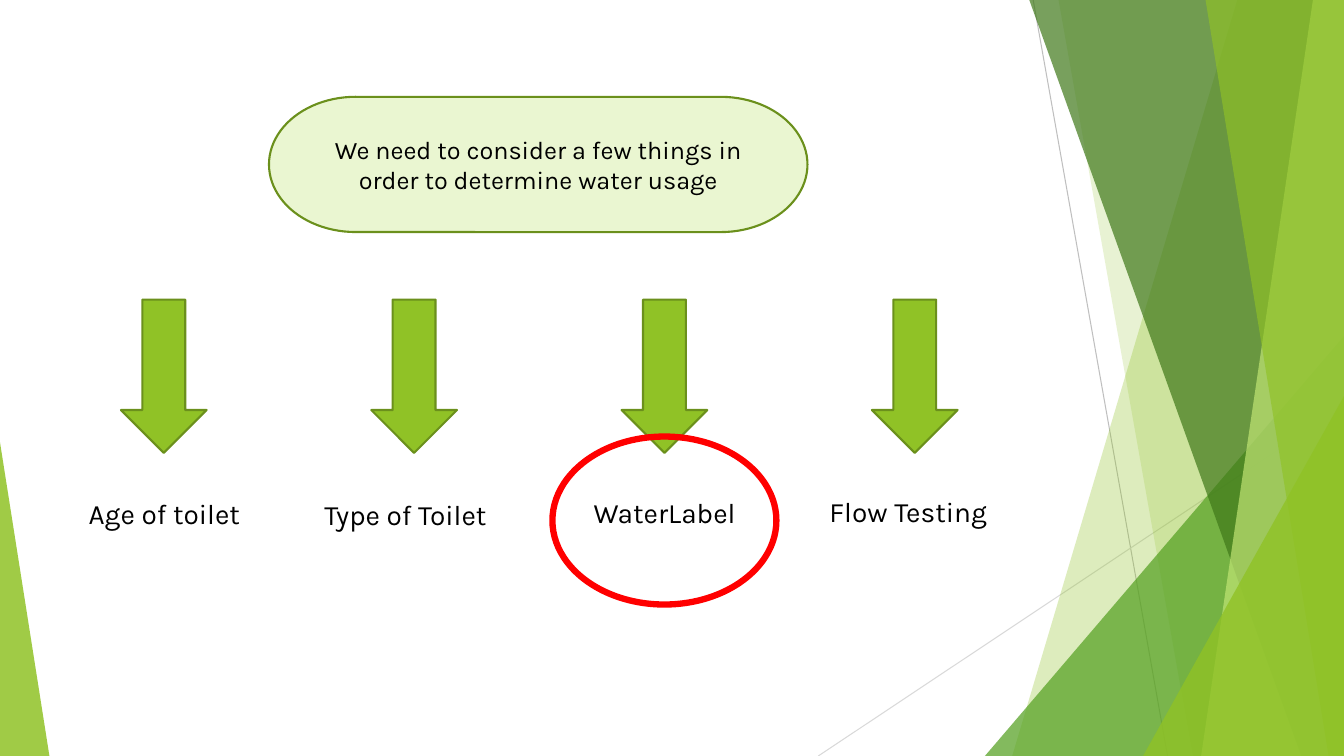
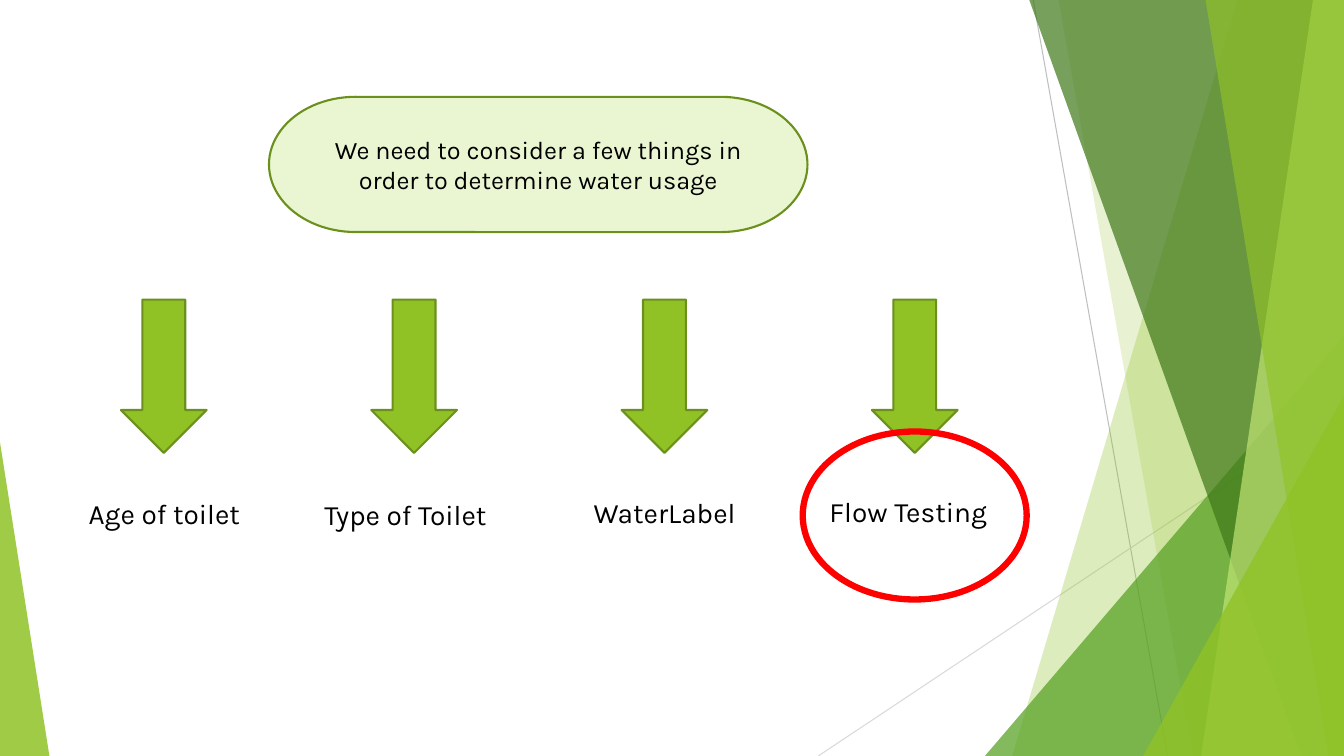
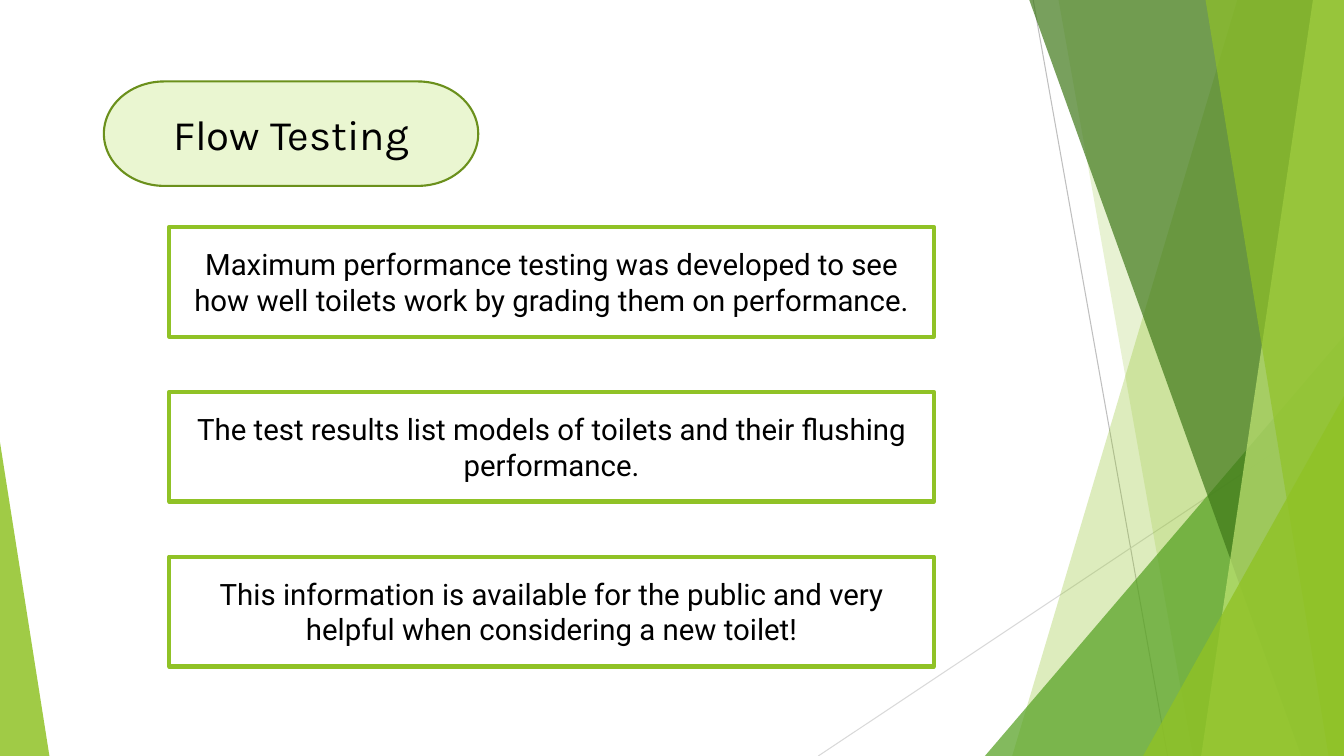
import pptx
import pptx.util
import pptx.dml.color
import pptx.enum.shapes
import pptx.enum.text
import pptx.oxml.ns
import lxml.etree

Pt = pptx.util.Pt
RGBColor = pptx.dml.color.RGBColor
SHAPE = pptx.enum.shapes.MSO_SHAPE
ALIGN = pptx.enum.text.PP_ALIGN
ANCHOR = pptx.enum.text.MSO_ANCHOR
qn = pptx.oxml.ns.qn

BLACK = RGBColor(0x00, 0x00, 0x00)
WHITE = RGBColor(0xFF, 0xFF, 0xFF)
RED = RGBColor(0xFF, 0x00, 0x00)
GREEN = RGBColor(0x90, 0xC2, 0x26)
MID_GREEN = RGBColor(0x54, 0xA0, 0x21)
DARK_GREEN = RGBColor(0x3F, 0x78, 0x19)
LIME = RGBColor(0xC0, 0xE4, 0x74)
PALE_GREEN = RGBColor(0xEA, 0xF6, 0xD1)
OUTLINE = RGBColor(0x6B, 0x90, 0x1C)
GRAY = RGBColor(0xBF, 0xBF, 0xBF)
LIGHT_GRAY = RGBColor(0xD9, 0xD9, 0xD9)

WIDTH, HEIGHT = 960, 540
HEAD_FONT, BODY_FONT = "Karla", "Roboto"

# Background lines: start, end, colour
RAYS = [
    ((738, 0), (834, HEIGHT), GRAY),
    ((WIDTH, 290), (584.5, HEIGHT), LIGHT_GRAY),
]
# Background bands, back to front: kind, measures, colour, opacity in percent.
# A blade gives the top and bottom of its left edge; it reaches the right side.
# A wedge gives left, top, width and the place of its tip; it stands on the bottom.
BANDS = [
    ("blade", (884, 723), GREEN, 30),
    ("blade", (756, 852), GREEN, 20),
    ("wedge", (703.5, 240, 256.5, 1), MID_GREEN, 72),
    ("blade", (735, 929.5), DARK_GREEN, 70),
    ("blade", (938, 858), LIME, 70),
    ("blade", (861, 949), GREEN, 65),
    ("wedge", (816.5, 283, 143.5, 1), GREEN, 80),
    ("wedge", (0, 316, 35.3, 0), GREEN, 85),
]

QUESTION = "We need to consider a few things in order to determine water usage"
# Factor, left and top of its label
FACTORS = [
    ("Age of toilet", 56.2, 351.4),
    ("Type of Toilet", 224.6, 352.1),
    ("WaterLabel", 416.9, 350.6),
    ("Flow Testing", 585.4, 349.9),
]
# Index of the circled factor, top of the circle
CIRCLES = [(2, 311.8), (3, 308.2)]
TESTING_FACTS = [
    "Maximum performance testing was developed to see how well toilets work "
    "by grading them on performance.",
    "The test results list models of toilets and their flushing performance.",
    "This information is available for the public and very helpful when "
    "considering a new toilet!",
]

ARROW_LEFT, ARROW_TOP, ARROW_WIDTH, ARROW_HEIGHT = 86.4, 214, 61.2, 109.5
ARROW_PITCH = 178.8
CIRCLE_WIDTH, CIRCLE_HEIGHT = 160, 120
FACT_TOP, FACT_PITCH = 162, 117.8


def write(shape, text, *, size, font=HEAD_FONT, align=ALIGN.CENTER, anchor=ANCHOR.MIDDLE):
    frame = shape.text_frame
    frame.word_wrap = True
    frame.vertical_anchor = anchor
    para = frame.paragraphs[0]
    para.alignment = align
    span = para.add_run()
    span.text = text
    span.font.size = Pt(size)
    span.font.name = font
    span.font.color.rgb = BLACK


def paint(shape, fill=None, line=None, line_width=1.5, opacity=100):
    shape.shadow.inherit = False
    if fill is None:
        shape.fill.background()
    else:
        shape.fill.solid()
        shape.fill.fore_color.rgb = fill
    if opacity < 100:
        color = shape.element.spPr.find(qn("a:solidFill")).find(qn("a:srgbClr"))
        lxml.etree.SubElement(color, qn("a:alpha")).set("val", str(opacity * 1000))
    if line is None:
        shape.line.fill.background()
    else:
        shape.line.color.rgb = line
        shape.line.width = Pt(line_width)


def add_shape(page, kind, left, top, width, height, **look):
    shape = page.shapes.add_shape(kind, Pt(left), Pt(top), Pt(width), Pt(height))
    paint(shape, **look)
    return shape


def add_ray(page, start, end, color):
    ray = page.shapes.add_connector(
        pptx.enum.shapes.MSO_CONNECTOR.STRAIGHT, *map(Pt, start + end))
    ray.line.color.rgb = color
    ray.line.width = Pt(0.75)
    lxml.etree.SubElement(ray.element.spPr, qn("a:effectLst"))


def add_blade(page, top_x, bottom_x, **look):
    outline = page.shapes.build_freeform(Pt(top_x), Pt(-0.7))
    corners = [(WIDTH, -0.7), (WIDTH, HEIGHT), (bottom_x, HEIGHT)]
    outline.add_line_segments([(Pt(x), Pt(y)) for x, y in corners], close=True)
    paint(outline.convert_to_shape(), **look)


def add_wedge(page, left, top, width, tip, **look):
    wedge = add_shape(page, SHAPE.ISOSCELES_TRIANGLE, left, top, width, HEIGHT - top, **look)
    wedge.adjustments[0] = tip


def add_background(page, layout):
    """Draw the bands on the page, then move them to the layout all pages share."""
    for placeholder in list(layout.placeholders):
        layout.shapes.element.remove(placeholder.element)
    for start, end, color in RAYS:
        add_ray(page, start, end, color)
    for kind, measures, color, opacity in BANDS:
        add_band = add_blade if kind == "blade" else add_wedge
        add_band(page, *measures, fill=color, opacity=opacity)
    for shape in list(page.shapes):
        layout.shapes.element.append(shape.element)


def add_title(page, text, left, top, width, height, size):
    title = add_shape(page, SHAPE.FLOWCHART_TERMINATOR, left, top, width, height,
                      fill=PALE_GREEN, line=OUTLINE)
    write(title, text, size=size)


def build_factors(page, circled, circle_top):
    add_title(page, QUESTION, 192.2, 69.2, 384.6, 96.6, size=18)
    for index, (name, left, top) in enumerate(FACTORS):
        add_shape(page, SHAPE.DOWN_ARROW, ARROW_LEFT + index * ARROW_PITCH, ARROW_TOP,
                  ARROW_WIDTH, ARROW_HEIGHT, fill=GREEN, line=OUTLINE)
        label = page.shapes.add_textbox(Pt(left), Pt(top), Pt(142), Pt(31.5))
        write(label, name, size=20, align=ALIGN.LEFT, anchor=ANCHOR.TOP)
    center = ARROW_LEFT + circled * ARROW_PITCH + ARROW_WIDTH / 2
    add_shape(page, SHAPE.OVAL, center - CIRCLE_WIDTH / 2, circle_top,
              CIRCLE_WIDTH, CIRCLE_HEIGHT, line=RED, line_width=4.5)


def build_testing(page):
    add_title(page, "Flow Testing", 74.2, 58.2, 267.4, 74.6, size=30)
    for index, fact in enumerate(TESTING_FACTS):
        box = add_shape(page, SHAPE.RECTANGLE, 121, FACT_TOP + index * FACT_PITCH, 546, 78.5,
                        fill=WHITE, line=GREEN, line_width=3)
        write(box, fact, size=21, font=BODY_FONT)


def main():
    deck = pptx.Presentation()
    deck.slide_width, deck.slide_height = Pt(WIDTH), Pt(HEIGHT)
    blank = deck.slide_layouts[6]
    pages = [deck.slides.add_slide(blank) for _ in range(len(CIRCLES) + 1)]
    add_background(pages[0], blank)
    for page, (circled, circle_top) in zip(pages, CIRCLES):
        build_factors(page, circled, circle_top)
    build_testing(pages[-1])
    deck.save("out.pptx")


if __name__ == "__main__":
    main()
